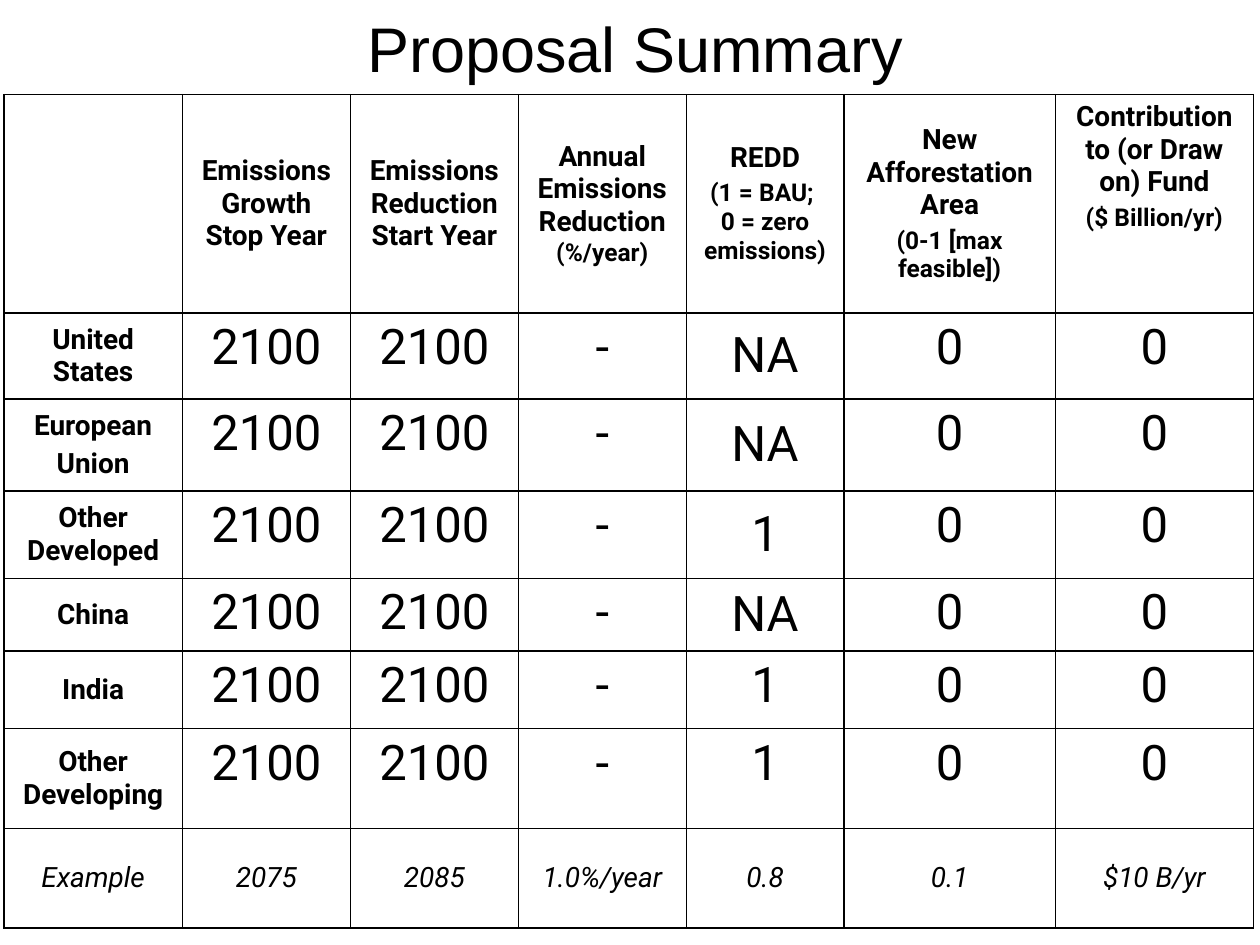
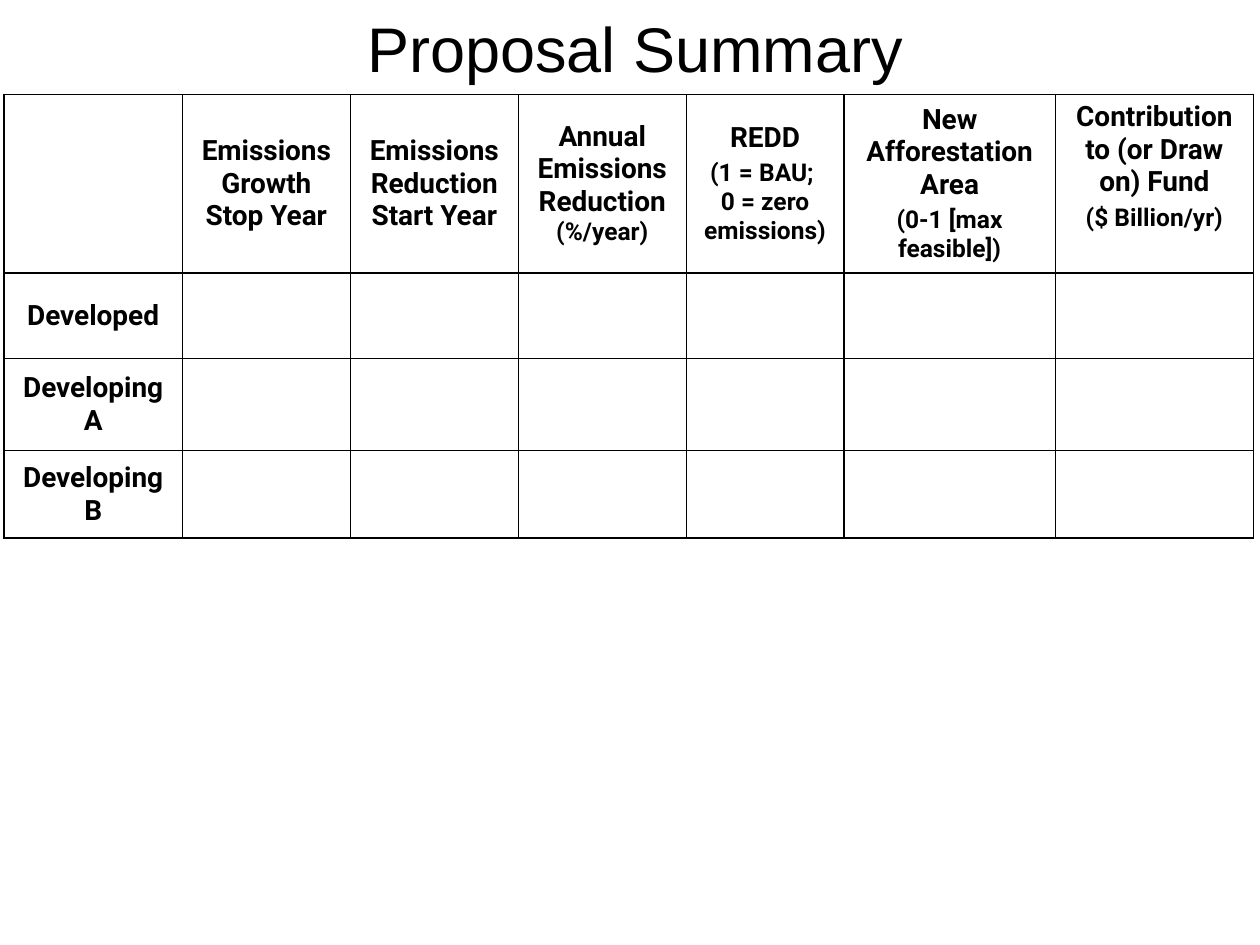
from lxml import etree
from pptx import Presentation
from pptx.dml.color import RGBColor
from pptx.enum.text import MSO_ANCHOR, PP_ALIGN
from pptx.oxml.ns import qn
from pptx.util import Pt

CENTER = PP_ALIGN.CENTER
TOP, MIDDLE = MSO_ANCHOR.TOP, MSO_ANCHOR.MIDDLE

BLACK, WHITE = "000000", "FFFFFF"
TITLE_FONT, TABLE_FONT = "Arial", "Roboto"
TITLE_SIZE, VALUE_SIZE, LABEL_SIZE, UNIT_SIZE = 36, 28, 16, 14
LABEL_SPACING = 0.2  # space before a label, as a share of its text size

TITLE_BOX = (18, 0, 690, 54)
TABLE_LEFT, TABLE_TOP = 2.25, 54
COLUMN_WIDTHS = (102, 96, 96, 96, 90, 121, 113)
REDD_COLUMN = 4

# Each heading is a list of (text, size) paragraphs.
HEADINGS = [
    [],
    [("Emissions Growth Stop Year", LABEL_SIZE)],
    [("Emissions Reduction Start Year", LABEL_SIZE)],
    [("Annual Emissions Reduction\v(%/year)", LABEL_SIZE)],
    [("REDD", LABEL_SIZE), ("(1 = BAU; \v0 = zero emissions)", UNIT_SIZE)],
    [("New Afforestation Area", LABEL_SIZE), ("(0-1 [max feasible])", UNIT_SIZE)],
    [("Contribution to (or Draw on) Fund", LABEL_SIZE), ("($ Billion/yr)", UNIT_SIZE)],
]

# Region label lines, row height, REDD value and its anchor.
REGIONS = [
    (["United States"], 49, "NA", MIDDLE),
    (["European", "Union"], 52.5, "NA", MIDDLE),
    (["Other Developed"], 50, "1", MIDDLE),
    (["China"], 41.5, "NA", MIDDLE),
    (["India"], 44.5, "1", TOP),
    (["Other Developing"], 57, "1", TOP),
]
EXAMPLE = ["Example", "2075", "2085", "1.0%/year", "0.8", "0.1", "$10 B/yr"]
EXAMPLE_HEIGHT = 57
BLOCS = [("Developed", 49), ("Developing A", 52.5), ("Developing B", 50)]


def color(hex_string):
    return RGBColor.from_string(hex_string)


def style_paragraph(paragraph, size, font_name, bold=False, italic=False):
    paragraph.alignment = CENTER
    font = paragraph.font
    font.name, font.size = font_name, Pt(size)
    font.bold, font.italic = bold, italic
    font.color.rgb = color(BLACK)


def add_title(slide, box, text):
    shape = slide.shapes.add_textbox(*map(Pt, box))
    frame = shape.text_frame
    frame.word_wrap = True
    frame.vertical_anchor = MIDDLE
    frame.text = text
    style_paragraph(frame.paragraphs[0], TITLE_SIZE, TITLE_FONT)


def add_borders(cell, width=1):
    properties = cell._tc.get_or_add_tcPr()
    for position, side in enumerate(("a:lnL", "a:lnR", "a:lnT", "a:lnB")):
        line = etree.Element(qn(side), w=str(Pt(width)))
        fill = etree.SubElement(line, qn("a:solidFill"))
        etree.SubElement(fill, qn("a:srgbClr"), val=BLACK)
        properties.insert(position, line)


def fill_cell(cell, paragraphs, anchor=MIDDLE, spacing=0, **emphasis):
    """Write (text, size) paragraphs, with space before as a share of the size."""
    cell.vertical_anchor = anchor
    frame = cell.text_frame
    for index, (text, size) in enumerate(paragraphs):
        paragraph = frame.add_paragraph() if index else frame.paragraphs[0]
        paragraph.text = text
        paragraph.space_before = Pt(size * spacing)
        style_paragraph(paragraph, size, TABLE_FONT, **emphasis)


def fill_label(cell, lines):
    paragraphs = [(line, LABEL_SIZE) for line in lines]
    fill_cell(cell, paragraphs, spacing=LABEL_SPACING, bold=True)


def add_grid(slide, left, top, row_heights):
    """Add the bordered table with its heading row and return it."""
    frame = slide.shapes.add_table(
        len(row_heights), len(COLUMN_WIDTHS), Pt(left), Pt(top),
        Pt(sum(COLUMN_WIDTHS)), Pt(sum(row_heights)))
    table = frame.table
    table.first_row = table.horz_banding = False
    for column, width in zip(table.columns, COLUMN_WIDTHS):
        column.width = Pt(width)
    for row, height in zip(table.rows, row_heights):
        row.height = Pt(height)
    for cell in table.iter_cells():
        cell.fill.solid()
        cell.fill.fore_color.rgb = color(WHITE)
        add_borders(cell)

    last = len(HEADINGS) - 1
    for index, heading in enumerate(HEADINGS):
        anchor = TOP if index == last else MIDDLE
        fill_cell(table.cell(0, index), heading, anchor, LABEL_SPACING, bold=True)
    annual_unit = table.cell(0, 3).text_frame.paragraphs[0].runs[-1]
    annual_unit.font.size = Pt(UNIT_SIZE)
    return table


def add_region_table(slide, left, top):
    heights = [125, *(region[1] for region in REGIONS), EXAMPLE_HEIGHT]
    table = add_grid(slide, left, top, heights)
    for row, (lines, _, redd, redd_anchor) in enumerate(REGIONS, start=1):
        fill_label(table.cell(row, 0), lines)
        values = ["2100", "2100", "-", redd, "0", "0"]
        for column, value in enumerate(values, start=1):
            anchor = redd_anchor if column == REDD_COLUMN else TOP
            fill_cell(table.cell(row, column), [(value, VALUE_SIZE)], anchor)
    for column, text in enumerate(EXAMPLE):
        spacing = 0 if column else LABEL_SPACING
        fill_cell(table.cell(len(heights) - 1, column), [(text, LABEL_SIZE)],
                  spacing=spacing, italic=True)


def add_bloc_table(slide, left, top):
    table = add_grid(slide, left, top, [102, *(height for _, height in BLOCS)])
    for row, (label, _) in enumerate(BLOCS, start=1):
        fill_label(table.cell(row, 0), [label])


def main():
    presentation = Presentation()
    presentation.slide_width, presentation.slide_height = Pt(720), Pt(540)
    blank = presentation.slide_layouts[6]
    for add_summary_table in (add_region_table, add_bloc_table):
        slide = presentation.slides.add_slide(blank)
        add_title(slide, TITLE_BOX, "Proposal Summary")
        add_summary_table(slide, TABLE_LEFT, TABLE_TOP)
    presentation.save("out.pptx")


if __name__ == "__main__":
    main()
